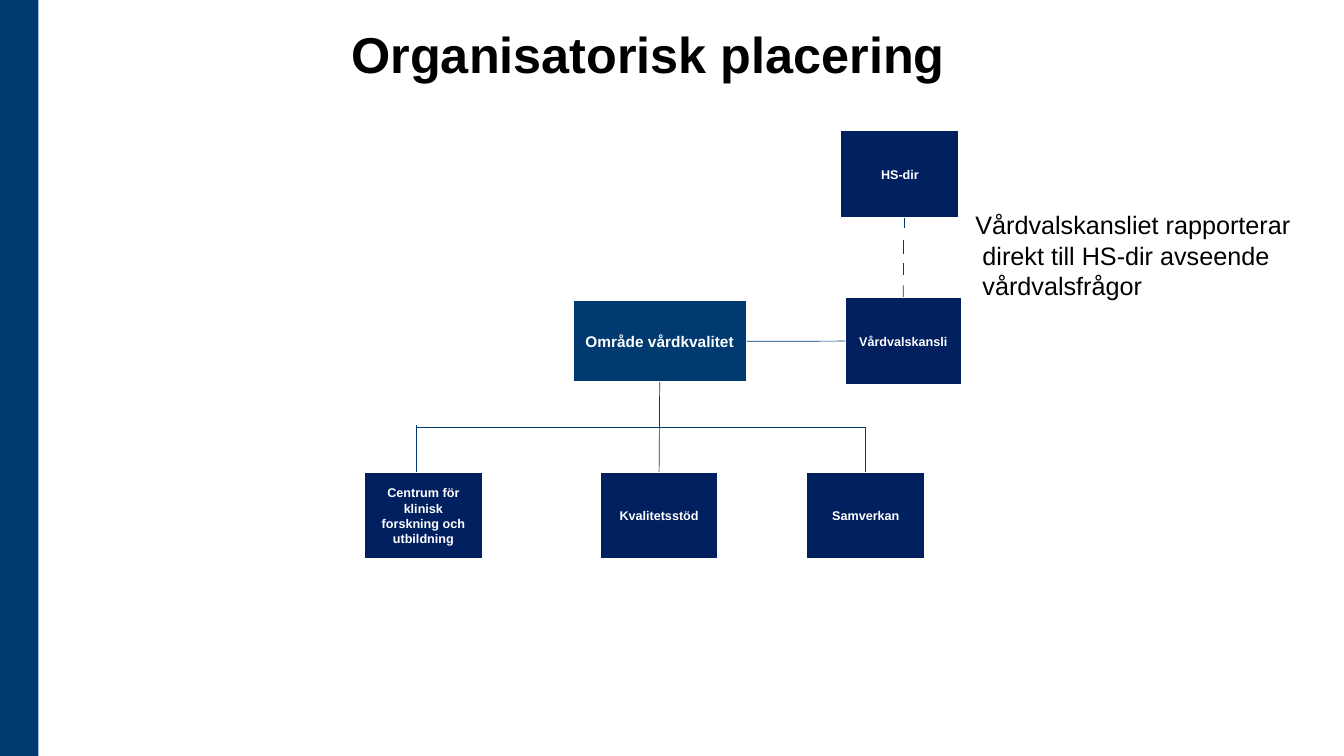
from dataclasses import dataclass
from typing import Optional

from lxml.etree import SubElement
from pptx import Presentation
from pptx.dml.color import RGBColor
from pptx.enum.shapes import MSO_CONNECTOR as Connector, MSO_SHAPE as Shape
from pptx.enum.text import MSO_ANCHOR as Anchor, PP_ALIGN as Align
from pptx.oxml.ns import qn
from pptx.util import Cm, Pt

COLORS = {"blue": "003A70", "navy": "002060", "white": "FFFFFF", "black": "000000"}
FONT = "Arial"
BOTTOM, LEFT, RIGHT, TOP = 2, 1, 3, 0


@dataclass
class Unit:
    text: str
    left: float
    top: float
    width: float = 3.0
    height: float = 2.21
    fill: str = "navy"
    size: int = 9


@dataclass
class Link:
    start: tuple[float, float]
    end: tuple[float, float]
    begin_at: Optional[tuple[str, int]] = None
    end_at: Optional[tuple[str, int]] = None


UNIT_ROW_TOP = 11.89
UNITS = {
    "centrum": Unit("Centrum för klinisk forskning och utbildning", 9.17, UNIT_ROW_TOP),
    "kvalitet": Unit("Kvalitetsstöd", 15.11, UNIT_ROW_TOP),
    "samverkan": Unit("Samverkan", 20.32, UNIT_ROW_TOP),
    "område": Unit("Område vårdkvalitet", 14.43, 7.57, 4.39, 2.06, "blue", 11),
    "kansli": Unit("Vårdvalskansli", 21.29, 7.49, 2.95),
    "direktör": Unit("HS-dir", 21.18, 3.28),
}
LINKS = [
    Link((10.49, 11.89), (10.49, 10.72)),
    Link((16.62, 11.89), (16.62, 9.63), ("kvalitet", TOP), ("område", BOTTOM)),
    Link((21.82, 11.89), (21.82, 10.77), ("samverkan", TOP)),
    Link((10.52, 10.77), (21.82, 10.77)),
    Link((18.82, 8.6), (21.29, 8.6), ("område", RIGHT), ("kansli", LEFT)),
    Link((22.78, 5.49), (22.78, 5.74)),
    Link((22.76, 6.05), (22.76, 6.4)),
    Link((22.76, 6.63), (22.76, 6.93)),
    Link((22.76, 7.19), (22.76, 7.49), None, ("kansli", TOP)),
]
NOTE_LINES = ["Vårdvalskansliet rapporterar", "direkt till HS-dir avseende", "vårdvalsfrågor"]


def color(name: str) -> RGBColor:
    return RGBColor.from_string(COLORS[name])


def format_text(text_frame, size: int, name: str, bold: bool, align) -> None:
    for paragraph in text_frame.paragraphs:
        paragraph.alignment = align
        for run in paragraph.runs:
            run.font.name = FONT
            run.font.size = Pt(size)
            run.font.bold = bold
            run.font.color.rgb = color(name)


def add_rectangle(slide, left: float, top: float, width: float, height: float, fill: str):
    shape = slide.shapes.add_shape(Shape.RECTANGLE, Cm(left), Cm(top), Cm(width), Cm(height))
    shape.shadow.inherit = False
    shape.fill.solid()
    shape.fill.fore_color.rgb = color(fill)
    shape.line.fill.background()
    return shape


def add_unit(slide, unit: Unit):
    shape = add_rectangle(slide, unit.left, unit.top, unit.width, unit.height, unit.fill)
    shape.line.color.rgb = color("white")
    shape.line.width = Pt(1.5)
    text_frame = shape.text_frame
    text_frame.text = unit.text
    text_frame.word_wrap = True
    text_frame.vertical_anchor = Anchor.MIDDLE
    format_text(text_frame, unit.size, "white", True, Align.CENTER)
    return shape


def add_link(slide, link: Link, shapes: dict) -> None:
    ends = [Cm(value) for value in link.start + link.end]
    connector = slide.shapes.add_connector(Connector.STRAIGHT, *ends)
    if link.begin_at:
        name, side = link.begin_at
        connector.begin_connect(shapes[name], side)
    if link.end_at:
        name, side = link.end_at
        connector.end_connect(shapes[name], side)
    connector.line.color.rgb = color("blue")
    connector.line.width = Pt(0.5)
    SubElement(connector._element.spPr, qn("a:effectLst"))


def add_title(slide) -> None:
    text_frame = slide.shapes.add_textbox(Cm(3.02), Cm(0.2), Cm(26.64), Cm(2.03)).text_frame
    text_frame.text = "Organisatorisk placering"
    text_frame.word_wrap = True
    text_frame.vertical_anchor = Anchor.BOTTOM
    format_text(text_frame, 36, "black", True, Align.CENTER)


def add_note(slide) -> None:
    text_frame = slide.shapes.add_textbox(Cm(24.33), Cm(5.16), Cm(8.53), Cm(2.57)).text_frame
    text_frame.text = "\n".join(NOTE_LINES)
    text_frame.word_wrap = False
    format_text(text_frame, 18, "black", False, Align.LEFT)
    for paragraph in text_frame.paragraphs[1:]:
        paragraph._p.get_or_add_pPr().set("marL", str(Cm(0.18)))


def main() -> None:
    presentation = Presentation()
    presentation.slide_width = Cm(33.87)
    presentation.slide_height = Cm(19.05)
    slide = presentation.slides.add_slide(presentation.slide_layouts[6])
    add_rectangle(slide, 0, 0, 0.97, 19.05, "blue")
    add_title(slide)
    shapes = {name: add_unit(slide, unit) for name, unit in UNITS.items()}
    for link in LINKS:
        add_link(slide, link, shapes)
    add_note(slide)
    presentation.save("out.pptx")


if __name__ == "__main__":
    main()
